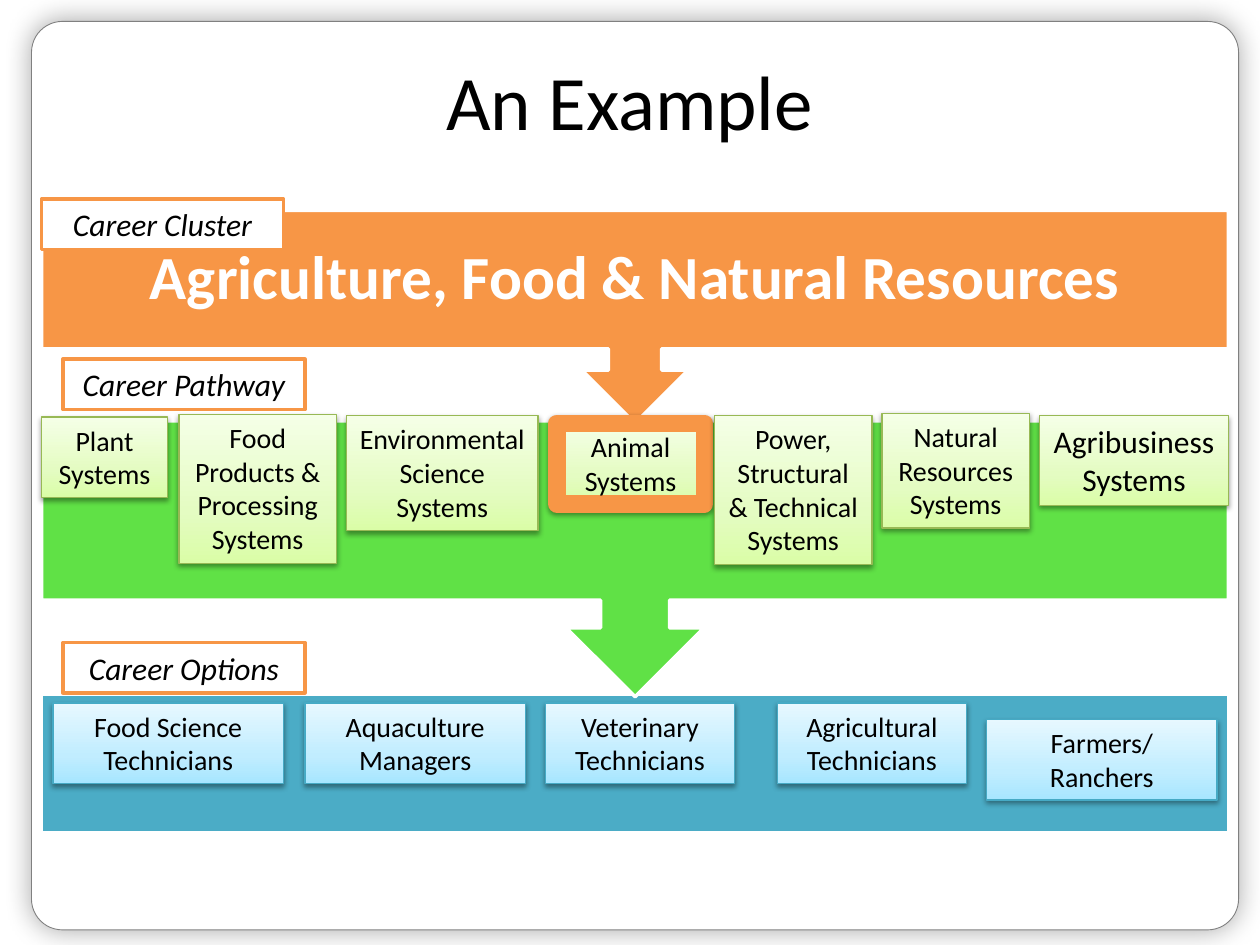
"""Build a slide that leads from a career cluster to its pathways and options."""
from copy import deepcopy
from typing import NamedTuple, Optional

from lxml import etree
from pptx import Presentation
from pptx.dml.color import RGBColor
from pptx.enum import shapes, text
from pptx.oxml import ns
from pptx.util import Inches, Pt

FONT = "Calibri"
BLACK, WHITE, ORANGE = "000000", "FFFFFF", "F79646"
BAND_X, BAND_W = 0.33, 9.42
KIND = shapes.MSO_SHAPE


class Look(NamedTuple):
    stops: tuple
    edge: str


class Card(NamedTuple):
    words: str
    x: float
    y: float
    w: float
    h: float
    size: float = 16
    edge: Optional[str] = None
    weight: float = 0.75


class Band(NamedTuple):
    kind: int
    y: float
    h: float
    fill: str
    turn: float


class Label(NamedTuple):
    words: str
    x: float
    y: float


GREEN = Look(("DAFDA7", "E4FCC2", "F5FFE7"), "98B955")
BLUE = Look(("A7E6FF", "C1EDFF", "E7F8FF"), "46AAC5")

BANDS = [
    Band(KIND.RECTANGLE, 5.51, 1.1, "4BACC6", 0),
    Band(KIND.UP_ARROW_CALLOUT, 3.34, 2.19, "60E146", 180),
    Band(KIND.UP_ARROW_CALLOUT, 1.67, 1.69, ORANGE, 180),
]
PATHWAYS = [
    Card("Plant Systems", 0.33, 3.31, 1, 0.64),
    Card("Animal Systems", 4.42, 3.36, 1.17, 0.64, edge=ORANGE, weight=10),
    Card("Food Products & Processing Systems", 1.42, 3.29, 1.25, 1.18),
    Card("Environmental Science Systems", 2.75, 3.3, 1.52, 0.91),
    Card("Natural Resources Systems", 7, 3.28, 1.17, 0.91),
    Card("Agribusiness Systems", 8.25, 3.3, 1.5, 0.71, size=18),
    Card("Power, Structural & Technical Systems", 5.67, 3.3, 1.25, 1.18),
]
OPTIONS = [
    Card("Food Science Technicians", 0.42, 5.58, 1.83, 0.64),
    Card("Aquaculture Managers", 2.42, 5.58, 1.75, 0.64),
    Card("Veterinary Technicians", 4.33, 5.58, 1.5, 0.64),
    Card("Agricultural Technicians", 6.17, 5.58, 1.5, 0.64),
    Card("Farmers/Ranchers", 7.83, 5.71, 1.83, 0.64),
]
LABELS = [
    Label("Career Pathway", 0.5, 2.85),
    Label("Career Cluster", 0.33, 1.58),
    Label("Career Options", 0.5, 5.1),
]


def color(code: str) -> RGBColor:
    """Turn a hex string into a colour."""
    return RGBColor.from_string(code)


def place(x: float, y: float, w: float, h: float) -> tuple:
    """Turn a box in inches into lengths."""
    return Inches(x), Inches(y), Inches(w), Inches(h)


def outline(shape, code: str, weight: float) -> None:
    """Set the line and drop the theme shadow."""
    shape.line.color.rgb = color(code)
    shape.line.width = Pt(weight)
    shape.shadow.inherit = False


def paint(shape, code: str) -> None:
    """Fill a shape with one colour."""
    shape.fill.solid()
    shape.fill.fore_color.rgb = color(code)


def blend(shape, stops: tuple) -> None:
    """Fill a shape with three colours from bottom to top."""
    shape.fill.gradient()
    group = shape._element.spPr.find(".//" + ns.qn("a:gsLst"))
    group.append(deepcopy(group[0]))
    for stop, code, spot in zip(shape.fill.gradient_stops, stops, (0, 0.35, 1)):
        stop.color.rgb = color(code)
        stop.position = spot
    shape.fill.gradient_angle = 90


def shade(shape, alpha: int, blur: float, dist: float, angle: int) -> None:
    """Give a shape a black outer shadow."""
    effects = shape._element.spPr.find(ns.qn("a:effectLst"))
    outer = etree.SubElement(
        effects, ns.qn("a:outerShdw"), blurRad=str(Pt(blur)),
        dist=str(Pt(dist)), dir=str(angle * 60000), rotWithShape="0")
    tint = etree.SubElement(outer, ns.qn("a:srgbClr"), val=BLACK)
    etree.SubElement(tint, ns.qn("a:alpha"), val=str(alpha * 1000))


def write(shape, words: str, size: float, code: str = BLACK, bold: bool = False,
          italic: bool = False, anchor=text.MSO_ANCHOR.TOP) -> None:
    """Put one centred paragraph into a shape."""
    frame = shape.text_frame
    frame.text = words
    frame.word_wrap = True
    frame.vertical_anchor = anchor
    para = frame.paragraphs[0]
    para.alignment = text.PP_ALIGN.CENTER
    font = para.runs[0].font
    font.name, font.size = FONT, Pt(size)
    font.bold, font.italic = bold, italic
    font.color.rgb = color(code)


def add_frame(slide) -> None:
    """Draw the rounded page frame behind everything."""
    frame = slide.shapes.add_shape(KIND.ROUNDED_RECTANGLE, *place(0.25, 0.17, 9.58, 7.21))
    frame.adjustments[0] = 0.034
    paint(frame, WHITE)
    outline(frame, "808080", 0.5)
    shade(frame, 34, 16, 0, 0)
    slide.shapes._spTree.insert(2, frame._element)


def add_band(slide, band: Band) -> None:
    """Draw one full-width band."""
    shape = slide.shapes.add_shape(band.kind, *place(BAND_X, band.y, BAND_W, band.h))
    shape.rotation = band.turn
    paint(shape, band.fill)
    outline(shape, WHITE, 2)


def add_cluster(slide) -> None:
    """Write the cluster name over the top band."""
    box = slide.shapes.add_textbox(*place(BAND_X, 1.67, BAND_W, 1.1))
    write(box, "Agriculture, Food & Natural Resources", 35, WHITE, bold=True,
          anchor=text.MSO_ANCHOR.MIDDLE)
    frame = box.text_frame
    frame.margin_left = frame.margin_right = Inches(0.27)
    frame.margin_top = frame.margin_bottom = Inches(0.27)
    frame.paragraphs[0].line_spacing = 0.9


def add_card(slide, card: Card, look: Look) -> None:
    """Draw one shaded card."""
    shape = slide.shapes.add_shape(KIND.RECTANGLE, *place(card.x, card.y, card.w, card.h))
    blend(shape, look.stops)
    outline(shape, card.edge or look.edge, card.weight)
    shade(shape, 38, 3.1, 1.6, 90)
    write(shape, card.words, card.size)
    shape.text_frame.auto_size = text.MSO_AUTO_SIZE.SHAPE_TO_FIT_TEXT


def add_label(slide, label: Label) -> None:
    """Draw one level label."""
    shape = slide.shapes.add_shape(KIND.RECTANGLE, *place(label.x, label.y, 1.92, 0.4))
    paint(shape, WHITE)
    outline(shape, ORANGE, 2)
    write(shape, label.words, 18, italic=True)
    shape.text_frame.auto_size = text.MSO_AUTO_SIZE.SHAPE_TO_FIT_TEXT


def main() -> None:
    """Build and save the slide."""
    deck = Presentation()
    deck.slide_width, deck.slide_height = Inches(10), Inches(7.5)
    slide = deck.slides.add_slide(deck.slide_layouts[5])
    title = slide.shapes.title
    title.left, title.top, title.width, title.height = place(0.5, 0.17, 9, 1.25)
    write(title, "An Example", 44, anchor=text.MSO_ANCHOR.MIDDLE)
    add_frame(slide)
    for band in BANDS:
        add_band(slide, band)
    add_cluster(slide)
    for cards, look in ((PATHWAYS, GREEN), (OPTIONS, BLUE)):
        for card in cards:
            add_card(slide, card, look)
    for label in LABELS:
        add_label(slide, label)
    deck.save("out.pptx")


if __name__ == "__main__":
    main()
